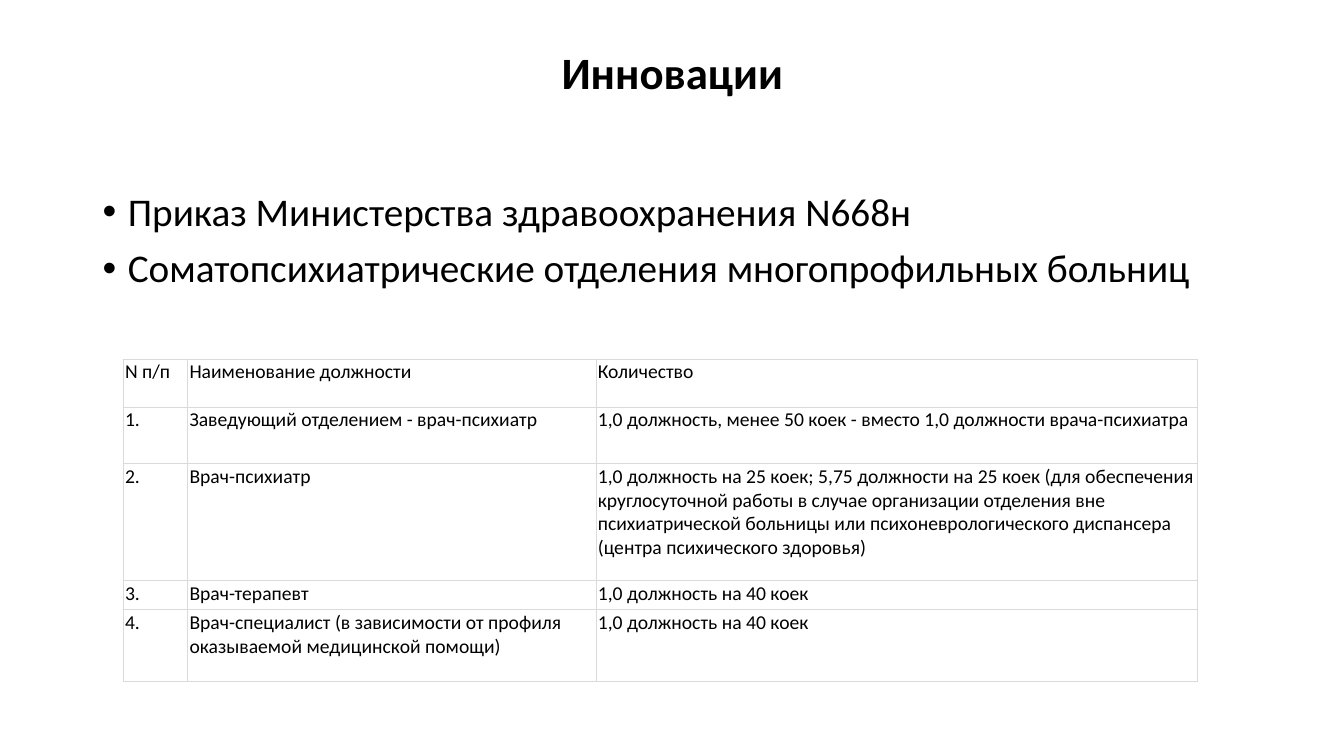
from lxml.etree import SubElement
from pptx import Presentation
from pptx.dml.color import RGBColor
from pptx.enum.text import MSO_ANCHOR, PP_ALIGN
from pptx.oxml.ns import qn
from pptx.util import Inches, Pt

COLORS = {"text": "000000", "border": "DADADA", "background": "FFFFFF"}

ORDERS = [
    "Приказ Министерства здравоохранения N668н",
    "Соматопсихиатрические отделения многопрофильных больниц",
]

STAFF = [
    ("N п/п", "Наименование должности", "Количество"),
    ("1.", "Заведующий отделением - врач-психиатр",
     "1,0 должность, менее 50 коек - вместо 1,0 должности врача-психиатра"),
    ("2.", "Врач-психиатр",
     "1,0 должность на 25 коек; 5,75 должности на 25 коек (для обеспечения "
     "круглосуточной работы в случае организации отделения вне психиатрической "
     "больницы или психоневрологического диспансера (центра психического здоровья)"),
    ("3.", "Врач-терапевт", "1,0 должность на 40 коек"),
    ("4.", "Врач-специалист (в зависимости от профиля оказываемой медицинской помощи)",
     "1,0 должность на 40 коек"),
]
COLUMN_WIDTHS = [0.64, 4.05, 5.97]
ROW_HEIGHTS = [0.48, 0.56, 1.16, 0.29, 0.71]


class SlideBuilder:
    font = "Calibri"

    def __init__(self, slide):
        self.slide = slide
        background = slide.background.fill
        background.solid()
        background.fore_color.rgb = RGBColor.from_string(COLORS["background"])

    def add_text(self, paragraph, text, size, bold=False):
        run = paragraph.add_run()
        run.text = text
        run.font.name = self.font
        run.font.size = Pt(size)
        run.font.bold = bold
        run.font.color.rgb = RGBColor.from_string(COLORS["text"])

    def text_frame(self, left, top, width, height, anchor):
        box = self.slide.shapes.add_textbox(
            Inches(left), Inches(top), Inches(width), Inches(height))
        frame = box.text_frame
        frame.word_wrap = True
        frame.vertical_anchor = anchor
        return frame

    def title(self, text, *place):
        heading = self.text_frame(*place, MSO_ANCHOR.MIDDLE).paragraphs[0]
        heading.alignment = PP_ALIGN.CENTER
        heading.line_spacing = 0.9
        self.add_text(heading, text, 32, bold=True)

    def bullets(self, items, *place):
        frame = self.text_frame(*place, MSO_ANCHOR.TOP)
        for index, item in enumerate(items):
            point = frame.add_paragraph() if index else frame.paragraphs[0]
            point.line_spacing = 0.9
            point.space_before = Pt(10)
            properties = point._p.get_or_add_pPr()
            properties.set("marL", str(Inches(0.25)))
            properties.set("indent", str(Inches(-0.25)))
            SubElement(properties, qn("a:buFont"), typeface="Arial")
            SubElement(properties, qn("a:buChar"), char="•")
            self.add_text(point, item, 28)

    def borders(self, cell):
        properties = cell._tc.get_or_add_tcPr()
        for side in ("lnL", "lnR", "lnT", "lnB"):
            line = SubElement(properties, qn(f"a:{side}"), w=str(Pt(0.5)))
            fill = SubElement(line, qn("a:solidFill"))
            SubElement(fill, qn("a:srgbClr"), val=COLORS["border"])

    def table(self, rows, widths, heights, left, top):
        frame = self.slide.shapes.add_table(
            len(rows), len(widths), Inches(left), Inches(top),
            Inches(sum(widths)), Inches(sum(heights)))
        table = frame.table
        table.first_row = False
        table.horz_banding = False
        for column, width in zip(table.columns, widths):
            column.width = Inches(width)
        for row, height, texts in zip(table.rows, heights, rows):
            row.height = Inches(height)
            for cell, text in zip(row.cells, texts):
                cell.margin_left = cell.margin_right = Inches(0.02)
                cell.margin_top = cell.margin_bottom = Inches(0.01)
                self.borders(cell)
                cell.fill.background()
                self.add_text(cell.text_frame.paragraphs[0], text, 14)


def main():
    presentation = Presentation()
    presentation.slide_width = Inches(13.33)
    presentation.slide_height = Inches(7.5)
    builder = SlideBuilder(presentation.slides.add_slide(presentation.slide_layouts[6]))
    builder.title("Инновации", 0.92, 0.02, 11.5, 1.45)
    builder.bullets(ORDERS, 0.92, 1.86, 11.5, 4.76)
    builder.table(STAFF, COLUMN_WIDTHS, ROW_HEIGHTS, 1.22, 3.56)
    presentation.save("out.pptx")


if __name__ == "__main__":
    main()
